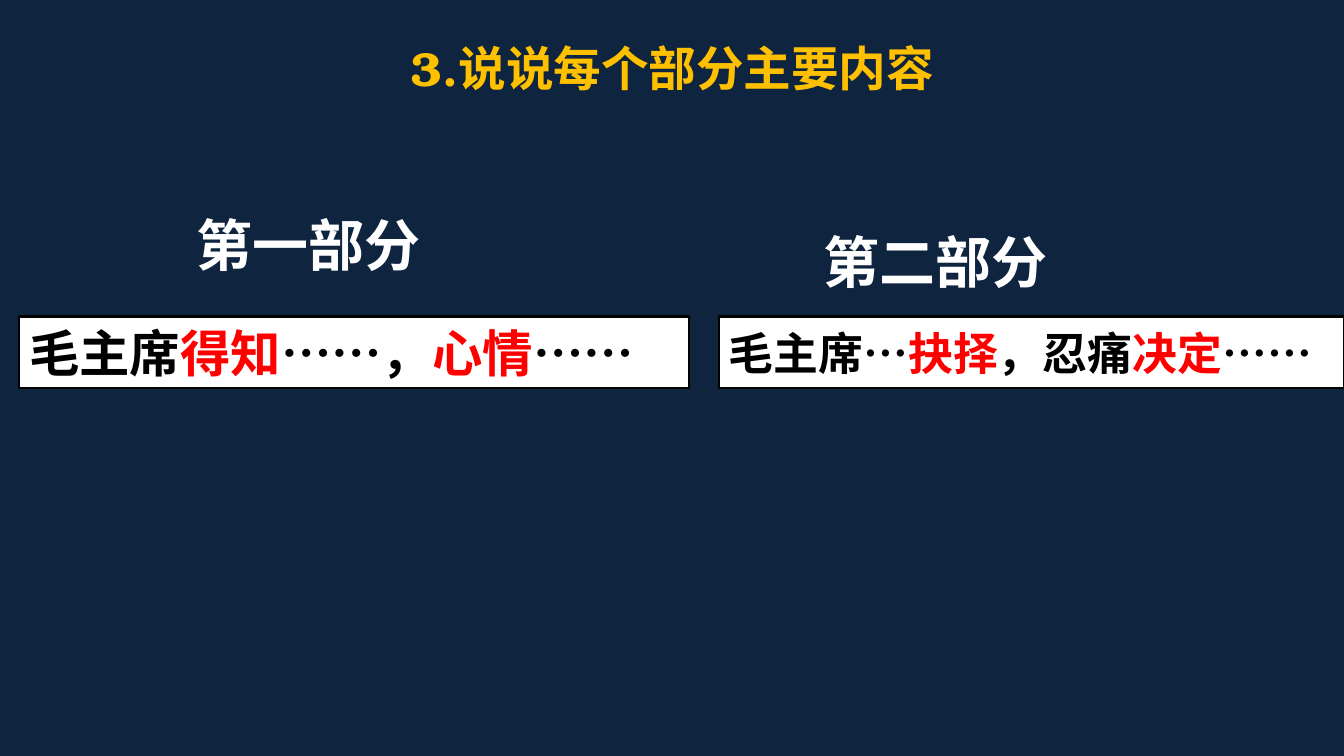
"""Build a slide that sums up the two parts of a lesson text."""
from dataclasses import dataclass

from pptx import Presentation
from pptx.dml.color import RGBColor
from pptx.enum.lang import MSO_LANGUAGE_ID as Language
from pptx.enum.shapes import MSO_SHAPE as Preset
from pptx.enum.text import MSO_ANCHOR as Anchor, MSO_AUTO_SIZE as AutoSize, PP_ALIGN as Align
from pptx.util import Inches, Pt


@dataclass(frozen=True)
class Theme:
    """Font, colours and type sizes of the slide."""
    font: str = "TeX Gyre Bonum"
    background: str = "0F243E"
    title: str = "FFC000"
    light: str = "FFFFFF"
    ink: str = "000000"
    accent: str = "FF0000"
    title_size: int = 34
    heading_size: int = 40


@dataclass(frozen=True)
class Part:
    """One part: its heading and its summary, whose odd spans are accented."""
    heading: str
    heading_left: float
    heading_top: float
    summary: tuple[str, ...]
    summary_left: float
    summary_width: float
    summary_size: int


THEME = Theme()
WIDTH, HEIGHT = 13.33, 7.5
SUMMARY_TOP, SUMMARY_HEIGHT = 3.14, 0.71
PARTS = (
    Part("第一部分", 1.85, 2.04, ("毛主席", "得知", "……，", "心情", "……"), 0.19, 6.64, 36),
    Part("第二部分", 8.07, 2.21, ("毛主席…", "抉择", "，忍痛", "决定", "……"), 7.13, 6.2, 32),
)


def place(left: float, top: float, width: float, height: float) -> tuple:
    """Turn a frame in inches into slide lengths."""
    return Inches(left), Inches(top), Inches(width), Inches(height)


def write(para, text: str, *, size: int, color: str) -> None:
    """Add one bold span of text to a paragraph."""
    span = para.add_run()
    span.text = text
    font = span.font
    font.name, font.size, font.bold = THEME.font, Pt(size), True
    font.color.rgb = RGBColor.from_string(color)
    font.language_id = Language.SIMPLIFIED_CHINESE


def add_title(page, text: str) -> None:
    """Format and fill the title placeholder."""
    title = page.shapes.title
    title.left, title.top, title.width, title.height = place(0.92, 0.4, 11.5, 0.99)
    frame = title.text_frame
    frame.auto_size, frame.vertical_anchor = AutoSize.NONE, Anchor.TOP
    para = frame.paragraphs[0]
    para.alignment, para.line_spacing = Align.CENTER, 0.9
    write(para, text, size=THEME.title_size, color=THEME.title)


def add_heading(page, part: Part) -> None:
    """Add the heading of a part."""
    box = page.shapes.add_textbox(*place(part.heading_left, part.heading_top, 2.45, 0.77))
    frame = box.text_frame
    frame.word_wrap, frame.auto_size = False, AutoSize.SHAPE_TO_FIT_TEXT
    write(frame.paragraphs[0], part.heading, size=THEME.heading_size, color=THEME.light)


def add_summary(page, part: Part) -> None:
    """Add the outlined summary box of a part."""
    box = page.shapes.add_shape(
        Preset.RECTANGLE, *place(part.summary_left, SUMMARY_TOP, part.summary_width, SUMMARY_HEIGHT))
    box.shadow.inherit = False
    box.fill.solid()
    box.fill.fore_color.rgb = RGBColor.from_string(THEME.light)
    box.line.color.rgb = RGBColor.from_string(THEME.ink)
    box.line.width = Pt(1.5)
    frame = box.text_frame
    frame.word_wrap, frame.vertical_anchor = True, Anchor.MIDDLE
    para = frame.paragraphs[0]
    para.alignment = Align.LEFT
    for index, text in enumerate(part.summary):
        color = THEME.accent if index % 2 else THEME.ink
        write(para, text, size=part.summary_size, color=color)


def main() -> None:
    """Build and save the deck."""
    deck = Presentation()
    deck.slide_width, deck.slide_height = Inches(WIDTH), Inches(HEIGHT)
    page = deck.slides.add_slide(deck.slide_layouts.get_by_name("Title Only"))
    page.background.fill.solid()
    page.background.fill.fore_color.rgb = RGBColor.from_string(THEME.background)
    add_title(page, "3.说说每个部分主要内容")
    for part in PARTS:
        add_heading(page, part)
        add_summary(page, part)
    deck.save("out.pptx")


if __name__ == "__main__":
    main()
